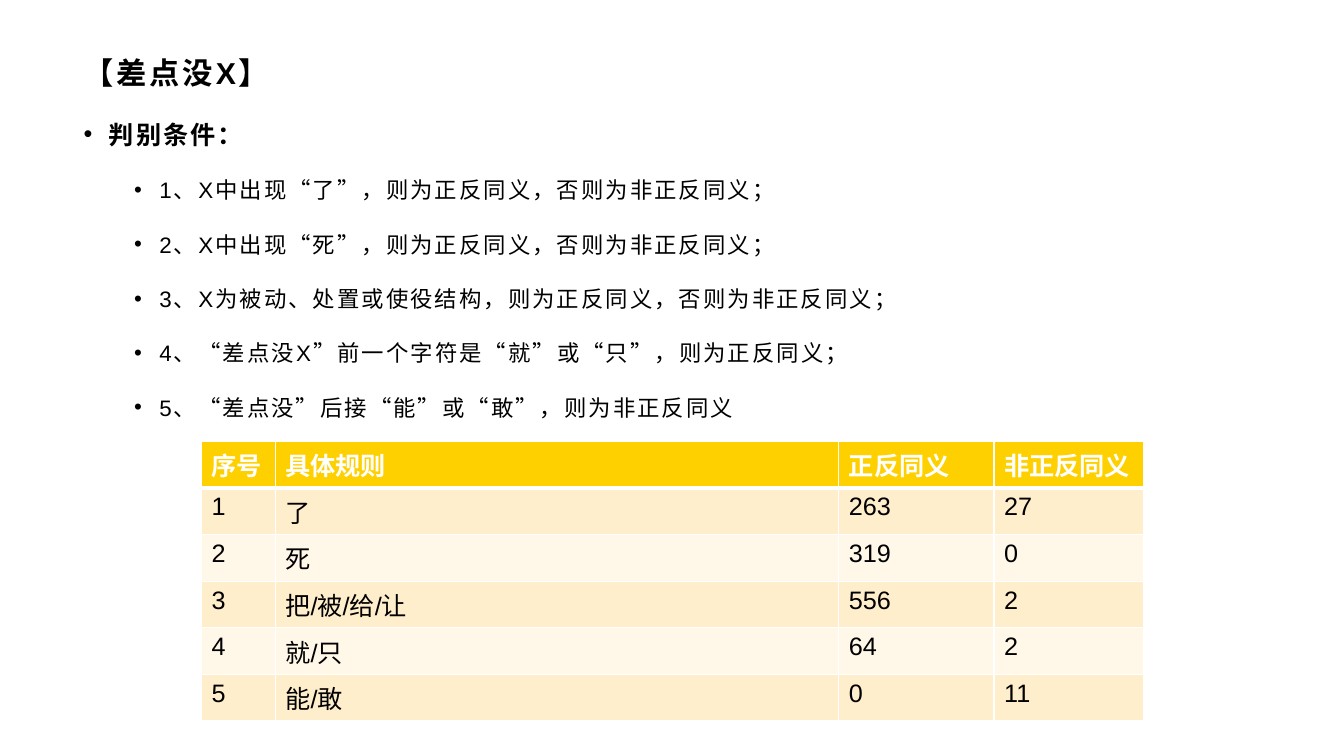
from pptx import Presentation
from pptx.dml.color import RGBColor
from pptx.enum.text import MSO_ANCHOR, MSO_AUTO_SIZE, PP_ALIGN
from pptx.oxml.ns import qn
from pptx.util import Inches, Pt
from lxml.etree import SubElement

FONT = "Arial"
BLACK = RGBColor(0x00, 0x00, 0x00)
WHITE = RGBColor(0xFF, 0xFF, 0xFF)
HEADER_GOLD = RGBColor(0xFE, 0xD0, 0x00)
BAND_DARK = RGBColor(0xFF, 0xEE, 0xCC)
BAND_LIGHT = RGBColor(0xFF, 0xF7, 0xE7)

TITLE = "【差点没X】"
HEADING = "判别条件："
CONDITIONS = [
    "1、X中出现“了”，则为正反同义，否则为非正反同义；",
    "2、X中出现“死”，则为正反同义，否则为非正反同义；",
    "3、X为被动、处置或使役结构，则为正反同义，否则为非正反同义；",
    "4、“差点没X”前一个字符是“就”或“只”，则为正反同义；",
    "5、“差点没”后接“能”或“敢”，则为非正反同义",
]
COLUMN_WIDTHS = [0.73, 5.59, 1.54, 1.48]
ROW_HEIGHT = 0.42
RULE_ROWS = [
    ["序号", "具体规则", "正反同义", "非正反同义"],
    ["1", "了", "263", "27"],
    ["2", "死", "319", "0"],
    ["3", "把/被/给/让", "556", "2"],
    ["4", "就/只", "64", "2"],
    ["5", "能/敢", "0", "11"],
]


def add_run(paragraph, text, size, color=BLACK, bold=False, spacing=0):
    run = paragraph.add_run()
    run.text = text
    run.font.name = FONT
    run.font.size = Pt(size)
    run.font.bold = bold
    run.font.color.rgb = color
    if spacing:
        run.font._element.set("spc", str(int(spacing * 100)))


def place(shape, left, top, width, height):
    shape.left, shape.top = Inches(left), Inches(top)
    shape.width, shape.height = Inches(width), Inches(height)
    shape.text_frame.word_wrap = True
    shape.text_frame.auto_size = MSO_AUTO_SIZE.NONE


def format_bullet(paragraph, level, indent, line_spacing):
    properties = paragraph._p.get_or_add_pPr()
    properties.set("marL", str(Inches(indent)))
    properties.set("indent", str(Inches(-0.25)))
    SubElement(properties, qn("a:buFont"), typeface=FONT)
    SubElement(properties, qn("a:buChar"), char="•")
    paragraph.level = level
    paragraph.alignment = PP_ALIGN.LEFT
    paragraph.line_spacing = line_spacing
    paragraph.space_before = Pt(0)
    paragraph.space_after = Pt(10)


def set_cell_borders(cell, bottom_width):
    properties = cell._tc.get_or_add_tcPr()
    for side, width in (("L", 1), ("R", 1), ("T", 1), ("B", bottom_width)):
        line = SubElement(properties, qn(f"a:ln{side}"), w=str(Pt(width)))
        fill = SubElement(line, qn("a:solidFill"))
        SubElement(fill, qn("a:srgbClr"), val=str(WHITE))


def fill_title(title):
    place(title, 0.73, 0.48, 11.87, 0.48)
    title.text_frame.vertical_anchor = MSO_ANCHOR.MIDDLE
    paragraph = title.text_frame.paragraphs[0]
    paragraph.alignment = PP_ALIGN.LEFT
    add_run(paragraph, TITLE, 21.6, bold=True, spacing=2)


def fill_conditions(body):
    place(body, 0.73, 1.04, 11.87, 5.89)
    frame = body.text_frame
    frame.vertical_anchor = MSO_ANCHOR.TOP
    heading = frame.paragraphs[0]
    format_bullet(heading, 0, 0.25, 1.3)
    add_run(heading, HEADING, 18, bold=True, spacing=1.5)
    for condition in CONDITIONS:
        paragraph = frame.add_paragraph()
        format_bullet(paragraph, 1, 0.75, 1.5)
        add_run(paragraph, condition, 16, spacing=1.5)


def add_rule_table(slide):
    table = slide.shapes.add_table(
        len(RULE_ROWS), len(COLUMN_WIDTHS), Inches(2), Inches(4.38),
        Inches(sum(COLUMN_WIDTHS)), Inches(ROW_HEIGHT * len(RULE_ROWS))).table
    for column, width in zip(table.columns, COLUMN_WIDTHS):
        column.width = Inches(width)
    for row_index, values in enumerate(RULE_ROWS):
        is_header = row_index == 0
        band = BAND_DARK if row_index % 2 else BAND_LIGHT
        for column_index, value in enumerate(values):
            cell = table.cell(row_index, column_index)
            set_cell_borders(cell, 3 if is_header else 1)
            cell.fill.solid()
            cell.fill.fore_color.rgb = HEADER_GOLD if is_header else band
            add_run(cell.text_frame.paragraphs[0], value, 18,
                    WHITE if is_header else BLACK, is_header)


def main():
    presentation = Presentation()
    presentation.slide_width = Inches(13.33)
    presentation.slide_height = Inches(7.5)
    slide = presentation.slides.add_slide(presentation.slide_layouts[1])

    # Title and list of conditions
    fill_title(slide.shapes.title)
    fill_conditions(slide.placeholders[1])

    # Counts for each rule
    add_rule_table(slide)

    presentation.save("out.pptx")


if __name__ == "__main__":
    main()
